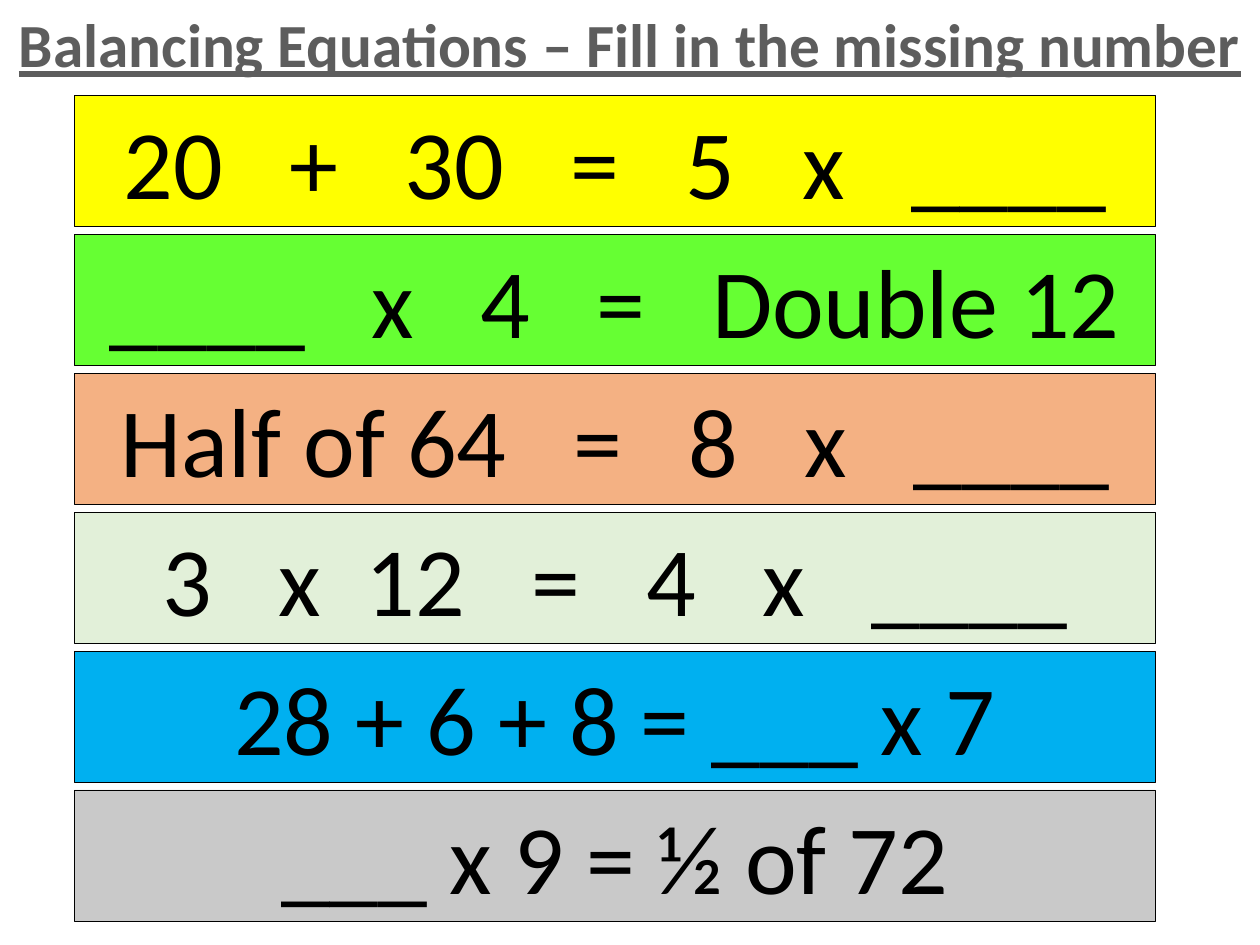
from dataclasses import dataclass

import pptx
import pptx.dml.color
import pptx.enum.shapes
import pptx.enum.text
import pptx.util

Inches = pptx.util.Inches
Pt = pptx.util.Pt
RGB = pptx.dml.color.RGBColor.from_string
CENTER = pptx.enum.text.PP_ALIGN.CENTER


@dataclass(frozen=True)
class Theme:
    font: str = "Calibri"
    title_size: float = 35
    equation_size: float = 56
    title: str = "5D5D5D"
    ink: str = "000000"
    border_width: float = 0.5
    space_em: float = 0.226  # width of a Calibri space


THEME = Theme()

# Gaps between terms, counted in space widths
WIDE, MEDIUM = 3, 2

# Fill colour, then the terms of the equation with the gaps between them
EQUATIONS = [
    ("FFFF00", ["20", WIDE, "+", WIDE, "30", WIDE, "=", WIDE, "5", WIDE, "x", WIDE, "____"]),
    ("66FF33", ["____", WIDE, "x", WIDE, "4", WIDE, "=", WIDE, "Double 12"]),
    ("F4B183", ["Half of 64", WIDE, "=", WIDE, "8", WIDE, "x", WIDE, "____"]),
    ("E2F0D9", ["3", WIDE, "x", MEDIUM, "12", WIDE, "=", WIDE, "4", WIDE, "x", WIDE, "____"]),
    ("00B0F0", ["28 + 6 + 8 = ___ x 7"]),
    ("C9C9C9", ["___ x 9 = ½ of 72"]),
]


def add_run(paragraph, text, size, color):
    run = paragraph.add_run()
    run.text = text
    run.font.name = THEME.font
    run.font.size = Pt(size)
    run.font.color.rgb = RGB(color)
    return run


def add_gap(paragraph, spaces):
    """Add one space, widened by character spacing to the given number of spaces."""
    run = add_run(paragraph, " ", THEME.equation_size, THEME.ink)
    extra_points = (spaces - 1) * THEME.space_em * THEME.equation_size
    run.font._element.set("spc", str(round(extra_points * 100)))


def place_title(slide, text, left, top, width, height):
    title = slide.shapes.title
    title.left, title.top, title.width, title.height = left, top, width, height
    frame = title.text_frame
    frame.margin_left = frame.margin_right = 0
    frame.vertical_anchor = pptx.enum.text.MSO_ANCHOR.TOP
    frame.auto_size = pptx.enum.text.MSO_AUTO_SIZE.NONE
    heading = frame.paragraphs[0]
    heading.alignment = CENTER
    heading.line_spacing = 1.0
    heading.space_before = Pt(0)
    run = add_run(heading, text, THEME.title_size, THEME.title)
    run.font.bold = True
    run.font.underline = True


def add_equation(slide, fill, terms, left, top, width, height):
    bar = slide.shapes.add_shape(
        pptx.enum.shapes.MSO_SHAPE.RECTANGLE, left, top, width, height)
    bar.shadow.inherit = False
    bar.fill.solid()
    bar.fill.fore_color.rgb = RGB(fill)
    bar.line.color.rgb = RGB(THEME.ink)
    bar.line.width = Pt(THEME.border_width)
    frame = bar.text_frame
    frame.word_wrap = True
    frame.vertical_anchor = pptx.enum.text.MSO_ANCHOR.TOP
    equation = frame.paragraphs[0]
    equation.alignment = CENTER
    for term in terms:
        if isinstance(term, int):
            add_gap(equation, term)
        else:
            add_run(equation, term, THEME.equation_size, THEME.ink)


def add_equation_stack(slide, equations, left, top, width, height):
    """Spread the equation bars evenly down the box."""
    bar_height = Inches(1.04)
    pitch = (height - bar_height) / (len(equations) - 1)
    for row, (fill, terms) in enumerate(equations):
        add_equation(slide, fill, terms, left, top + round(row * pitch), width, bar_height)


def main():
    deck = pptx.Presentation()
    deck.slide_width, deck.slide_height = Inches(10), Inches(7.5)
    slide = deck.slides.add_slide(deck.slide_layouts.get_by_name("Title Only"))
    place_title(slide, "Balancing Equations – Fill in the missing number",
                0, 0, deck.slide_width, Inches(0.69))
    add_equation_stack(slide, EQUATIONS,
                       Inches(0.59), Inches(0.76), Inches(8.58), Inches(6.55))
    deck.save("out.pptx")


if __name__ == "__main__":
    main()
